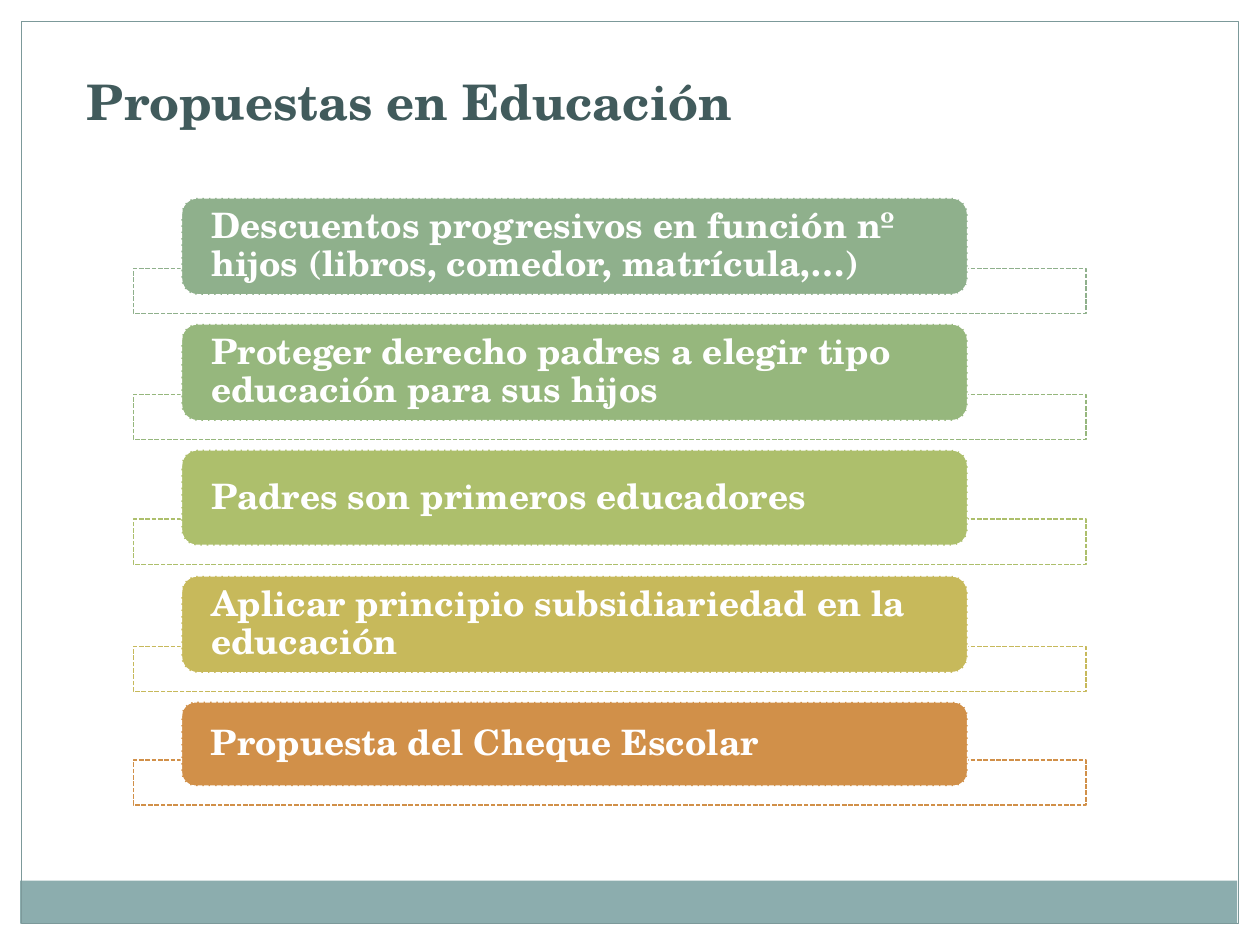
from dataclasses import dataclass
from typing import Optional

from pptx import Presentation
from pptx.dml.color import RGBColor
from pptx.enum.dml import MSO_LINE
from pptx.enum.shapes import MSO_SHAPE
from pptx.enum.text import MSO_ANCHOR, PP_ALIGN
from pptx.util import Inches, Pt

RECTANGLE = MSO_SHAPE.RECTANGLE
ROUNDED = MSO_SHAPE.ROUNDED_RECTANGLE
DASH = MSO_LINE.SQUARE_DOT
LEFT = PP_ALIGN.LEFT
TOP = MSO_ANCHOR.TOP
MIDDLE = MSO_ANCHOR.MIDDLE

FONT = "TeX Gyre Schola"
WHITE = "FFFFFF"
FIRST_TOP = 1.57
STEP = 1.0
OVERLAP = 0.21


@dataclass
class Proposal:
    text: str
    color: str
    height: float


PROPOSALS = [
    Proposal("Descuentos progresivos en función nº hijos (libros, comedor, matrícula,…)", "8FB08C", 0.77),
    Proposal("Proteger derecho padres a elegir tipo educación para sus hijos", "96B77D", 0.77),
    Proposal("Padres son primeros educadores", "ADBF6C", 0.76),
    Proposal("Aplicar principio subsidiariedad en la educación", "C7B95B", 0.77),
    Proposal("Propuesta del Cheque Escolar", "D19049", 0.67),
]


def color(value: str) -> RGBColor:
    return RGBColor.from_string(value)


def place(box, left: float, top: float, width: float, height: float) -> None:
    box.left, box.top = Inches(left), Inches(top)
    box.width, box.height = Inches(width), Inches(height)


def add_box(page, kind, left: float, top: float, width: float, height: float, *,
            fill: Optional[str] = None, line: Optional[str] = None,
            weight: float = 0.75, dash=None):
    box = page.shapes.add_shape(kind, Inches(left), Inches(top), Inches(width), Inches(height))
    box.shadow.inherit = False
    if fill:
        box.fill.solid()
        box.fill.fore_color.rgb = color(fill)
    else:
        box.fill.background()
    if line:
        box.line.color.rgb = color(line)
        box.line.width = Pt(weight)
        if dash is not None:
            box.line.dash_style = dash
    else:
        box.line.fill.background()
    return box


def write(box, text: str, *, size: float, ink: str, anchor, wrap: bool = True,
          side: float = 0.1, edge: float = 0.05, spacing: float = 1.0) -> None:
    frame = box.text_frame
    frame.word_wrap = wrap
    frame.vertical_anchor = anchor
    frame.margin_left = frame.margin_right = Inches(side)
    frame.margin_top = frame.margin_bottom = Inches(edge)
    para = frame.paragraphs[0]
    para.alignment = LEFT
    para.line_spacing = spacing
    span = para.add_run()
    span.text = text
    span.font.name = FONT
    span.font.size = Pt(size)
    span.font.bold = True
    span.font.color.rgb = color(ink)


def add_proposal(page, proposal: Proposal, top: float) -> None:
    frame_top = top + proposal.height - OVERLAP
    add_box(page, RECTANGLE, 1.06, frame_top, 7.56, 0.36,
            fill=WHITE, line=proposal.color, weight=0.9, dash=DASH)
    label = add_box(page, ROUNDED, 1.44, top, 6.24, proposal.height,
                    fill=proposal.color, line=WHITE, weight=0.9, dash=DASH)
    write(label, proposal.text, size=20, ink=WHITE, anchor=MIDDLE,
          side=0.2, edge=0, spacing=0.9)


def main() -> None:
    deck = Presentation()
    deck.slide_width, deck.slide_height = Inches(10), Inches(7.5)
    page = deck.slides.add_slide(deck.slide_layouts[5])

    add_box(page, RECTANGLE, 0.16, 6.99, 9.66, 0.34, fill="8CADAE")
    add_box(page, RECTANGLE, 0.17, 0.17, 9.66, 7.16, line="7C999A")

    title = page.shapes.title
    place(title, 0.59, 0.52, 5.49, 0.57)
    write(title, "Propuestas en Educación", size=28, ink="415B5C", anchor=TOP, wrap=False)

    for index, proposal in enumerate(PROPOSALS):
        add_proposal(page, proposal, FIRST_TOP + index * STEP)

    deck.save("out.pptx")


if __name__ == "__main__":
    main()
